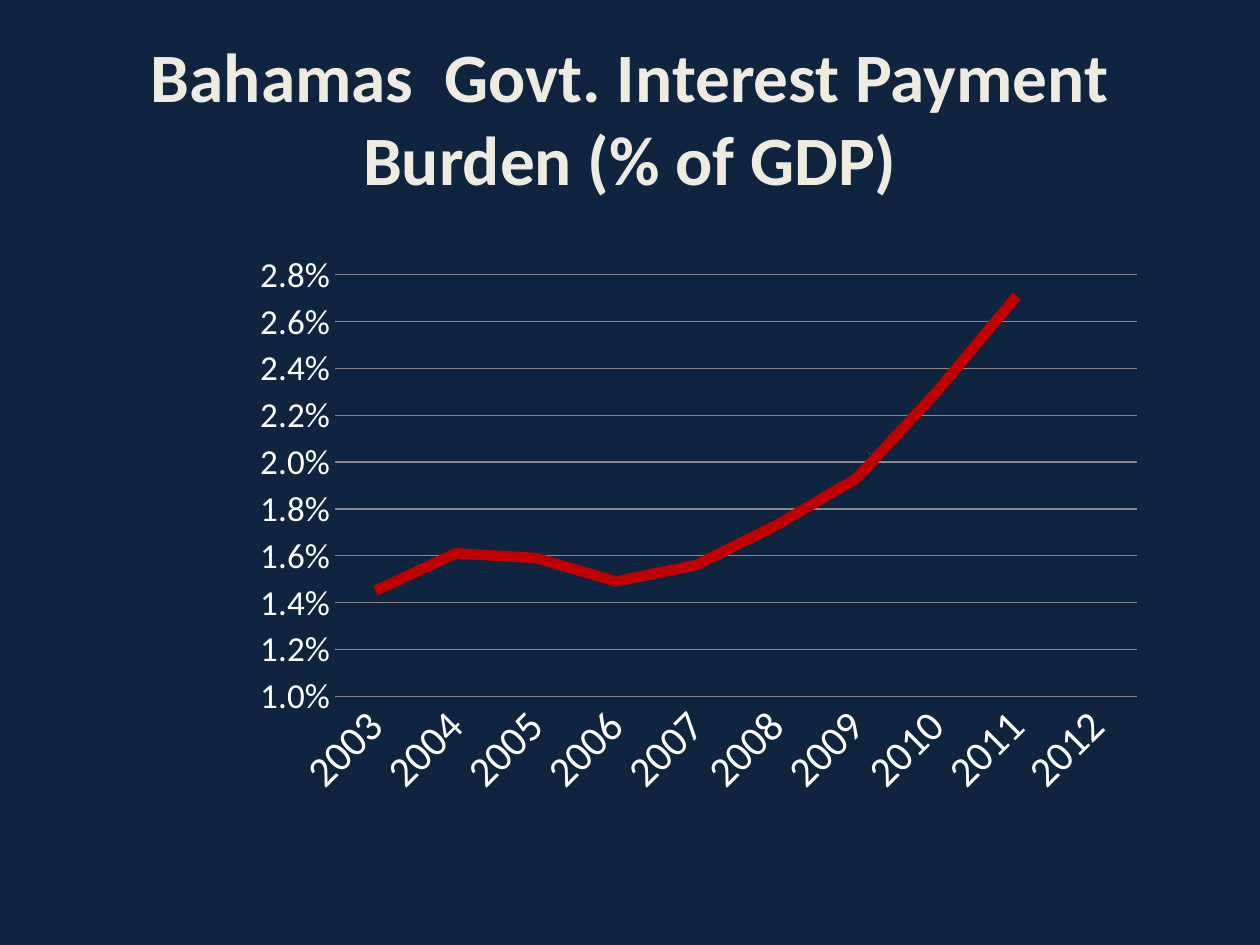
from pptx import Presentation
from pptx.chart.data import CategoryChartData
from pptx.dml.color import RGBColor
from pptx.enum.chart import XL_CHART_TYPE, XL_MARKER_STYLE, XL_TICK_MARK
from pptx.enum.text import MSO_ANCHOR, PP_ALIGN
from pptx.util import Inches, Pt

LINE = XL_CHART_TYPE.LINE
NO_MARKER = XL_MARKER_STYLE.NONE
NO_TICK = XL_TICK_MARK.NONE
MIDDLE = MSO_ANCHOR.MIDDLE
CENTER = PP_ALIGN.CENTER
FONT = "Calibri"
GREY = "878787"


def paint(color, value):
    color.rgb = RGBColor.from_string(value)


prs = Presentation()
prs.slide_width, prs.slide_height = Inches(10), Inches(7.5)
W, H = prs.slide_width, prs.slide_height
s = prs.slides.add_slide(prs.slide_layouts[6])

# Background
fill = s.background.fill
fill.solid()
paint(fill.fore_color, "0F243E")

# Title
sp = s.shapes.add_textbox(int(W * 0.05), int(H * 0.04), int(W * 0.9), Inches(1.25))
tf = sp.text_frame
tf.word_wrap = True
tf.vertical_anchor = MIDDLE
p = tf.paragraphs[0]
p.alignment = CENTER
r = p.add_run()
r.text = "Bahamas  Govt. Interest Payment Burden (% of GDP)"
r.font.name, r.font.size, r.font.bold = FONT, Pt(39.6), True
paint(r.font.color, "EEECE1")

# Interest burden by year, with no value yet for 2012
data = CategoryChartData(number_format="0.0%")
data.categories = [str(year) for year in range(2003, 2013)]
data.add_series("Series 1", [0.0145, 0.0161, 0.0159, 0.0149, 0.0156,
                             0.0173, 0.0193, 0.023, 0.0271, None])
chart = s.shapes.add_chart(LINE, Inches(1.92), Inches(1.92),
                           Inches(7.25), Inches(4.5), data).chart
chart.has_title = False
chart.has_legend = False
chart.font.name, chart.font.size = FONT, Pt(20)
paint(chart.font.color, "FFFFFF")

# Series line
plot = chart.plots[0]
plot.vary_by_categories = False
series = plot.series[0]
series.smooth = False
series.marker.style = NO_MARKER
series.format.line.width = Pt(6)
paint(series.format.line.color, "C00000")

# Axes
cat, val = chart.category_axis, chart.value_axis
for axis, size in ((cat, 24), (val, 20)):
    axis.major_tick_mark = axis.minor_tick_mark = NO_TICK
    font = axis.tick_labels.font
    font.name, font.size = FONT, Pt(size)
    paint(font.color, "FFFFFF")
val.minimum_scale, val.maximum_scale, val.major_unit = 0.01, 0.028, 0.002
val.tick_labels.number_format = "0.0%"
val.tick_labels.number_format_is_linked = False
val.format.line.fill.background()
val.has_major_gridlines = True
for line in (cat.format.line, val.major_gridlines.format.line):
    line.width = Pt(0.75)
    paint(line.color, GREY)

# Year labels slant upwards by 45 degrees
body = cat._element.xpath("c:txPr/a:bodyPr")[0]
body.set("rot", str(-45 * 60000))
body.set("vert", "horz")

prs.save("out.pptx")
